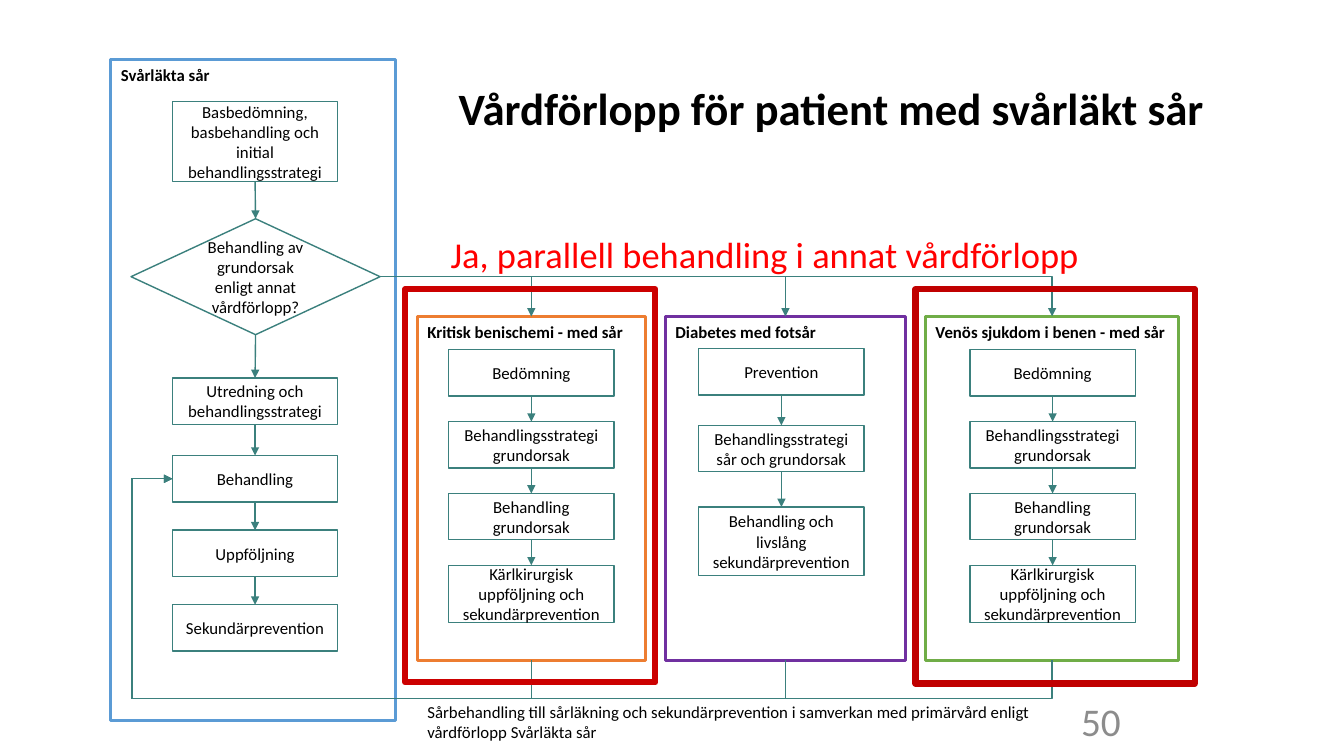
import pptx
import pptx.util
import pptx.dml.color
import pptx.enum.shapes
import pptx.enum.text
import pptx.oxml.ns
import lxml.etree

THEME = {
    "font": "Calibri",
    "black": "000000", "white": "FFFFFF", "grey": "8C8C8C", "alert": "FF0000",
    "teal": "3B807D", "blue": "5B9BD5", "orange": "ED7D31", "purple": "7030A0",
    "green": "70AD47", "red": "CC0000", "dark red": "C00000",
    "body": 12, "subtitle": 26, "number": 28, "title": 32,
    "thin": 1, "lane": 2.25, "thick": 4.5,
}
SHAPE = pptx.enum.shapes.MSO_SHAPE
LINK = pptx.enum.shapes.MSO_CONNECTOR
ALIGN = pptx.enum.text.PP_ALIGN
ANCHOR = pptx.enum.text.MSO_ANCHOR
TOP, LEFT, BOTTOM, RIGHT = range(4)

deck = pptx.Presentation()
deck.slide_width = pptx.util.Inches(13.33)
deck.slide_height = pptx.util.Inches(7.5)
page = deck.slides.add_slide(deck.slide_layouts[6])

# The page is a grid of 133.3 columns and 75 rows
COLUMN = deck.slide_width / 133.3
ROW = deck.slide_height / 75


def add_block(place, text="", kind=SHAPE.RECTANGLE, line=None, weight="thin", fill=None,
              size="body", color="black", bold=False, centred=False, middle=False):
    """Place a shape, or a text box when kind is None, with styled text."""
    left, top, width, height = place
    area = [round(v) for v in (left * COLUMN, top * ROW, width * COLUMN, height * ROW)]
    if kind is None:
        box = page.shapes.add_textbox(*area)
    else:
        box = page.shapes.add_shape(kind, *area)
        box.shadow.inherit = False
        box.line.color.rgb = pptx.dml.color.RGBColor.from_string(THEME[line])
        box.line.width = pptx.util.Pt(THEME[weight])
        if fill:
            box.fill.solid()
            box.fill.fore_color.rgb = pptx.dml.color.RGBColor.from_string(THEME[fill])
        else:
            box.fill.background()
    frame = box.text_frame
    frame.word_wrap = True
    frame.vertical_anchor = ANCHOR.MIDDLE if middle else ANCHOR.TOP
    frame.text = text
    para = frame.paragraphs[0]
    para.alignment = ALIGN.CENTER if centred else ALIGN.LEFT
    for span in para.runs:
        span.font.name = THEME["font"]
        span.font.size = pptx.util.Pt(THEME[size])
        span.font.bold = bold
        span.font.color.rgb = pptx.dml.color.RGBColor.from_string(THEME[color])
    return box


def join(start, start_side, end, end_side, preset=None):
    """Connect two shapes with an arrow; preset names an elbow geometry."""
    arrow = page.shapes.add_connector(LINK.ELBOW if preset else LINK.STRAIGHT, 0, 0, 0, 0)
    arrow.begin_connect(start, start_side)
    arrow.end_connect(end, end_side)
    arrow.line.color.rgb = pptx.dml.color.RGBColor.from_string(THEME["teal"])
    arrow.line.width = pptx.util.Pt(THEME["thin"])
    properties = arrow.element.spPr
    lxml.etree.SubElement(properties.find(pptx.oxml.ns.qn("a:ln")),
                          pptx.oxml.ns.qn("a:tailEnd"), type="triangle")
    lxml.etree.SubElement(properties, pptx.oxml.ns.qn("a:effectLst"))
    if preset:
        properties.find(pptx.oxml.ns.qn("a:prstGeom")).set("prst", preset)
    return arrow


# Headings, caption and page number
add_block((94.2, 69.5, 30, 4), "50", None, size="number", color="grey",
          centred=True, middle=True)
title = add_block((44.5, 8.7, 78.7, 4.7), "Vårdförlopp för patient med svårläkt sår", None,
                  size="title", bold=True, middle=True)
title.text_frame.paragraphs[0].line_spacing = 0.9
add_block((43.7, 22.5, 81.9, 5.4), "Ja, parallell behandling i annat vårdförlopp", None,
          size="subtitle", color="alert")
add_block((41.4, 69.1, 62.9, 5), "Sårbehandling till sårläkning och sekundärprevention i "
          "samverkan med primärvård enligt vårdförlopp Svårläkta sår", None)

# Main pathway and the three parallel lanes: frame, colour, heading, box left, steps
BOX_WIDTH, BOX_HEIGHT = 16.4, 4.6
LANE_TOP, LANE_HEIGHT = 31.4, 34.1
STEP_TOP, STEP_PITCH = 34.7, 7.13
vessel_steps = [
    (STEP_TOP + row * STEP_PITCH, height, text) for row, (height, text) in enumerate([
        (BOX_HEIGHT, "Bedömning"),
        (BOX_HEIGHT, "Behandlingsstrategi grundorsak"),
        (BOX_HEIGHT, "Behandling grundorsak"),
        (5.7, "Kärlkirurgisk uppföljning och sekundärprevention"),
    ])
]
diabetes_steps = [
    (34.6, BOX_HEIGHT, "Prevention"),
    (42.2, BOX_HEIGHT, "Behandlingsstrategi sår och grundorsak"),
    (50.3, 6.8, "Behandling och livslång sekundärprevention"),
]
main_steps = [
    (10.1, 7.9, "Basbedömning, basbehandling och initial behandlingsstrategi"),
    (21.7, 11.5, "Behandling av grundorsak enligt annat vårdförlopp?"),
    (37.5, BOX_HEIGHT, "Utredning och behandlingsstrategi"),
    (45.2, BOX_HEIGHT, "Behandling"),
    (52.6, BOX_HEIGHT, "Uppföljning"),
    (60, BOX_HEIGHT, "Sekundärprevention"),
]
pathways = [
    ((11, 5.9, 28.2, 65.6), "blue", "Svårläkta sår", 17.1, main_steps),
    ((41.4, LANE_TOP, 22.6, LANE_HEIGHT), "orange", "Kritisk benischemi - med sår",
     44.5, vessel_steps),
    ((66, LANE_TOP, 23.8, LANE_HEIGHT), "purple", "Diabetes med fotsår",
     69.3, diabetes_steps),
    ((91.8, LANE_TOP, 25.1, LANE_HEIGHT), "green", "Venös sjukdom i benen - med sår",
     96.2, vessel_steps),
]
lanes, boxes = [], {}
for place, color, heading, box_left, steps in pathways:
    lanes.append(add_block(place, heading, line=color, weight="lane", bold=True))
    previous = None
    for top, height, text in steps:
        decision = text.endswith("?")
        box = add_block((13, top, 24.7, height) if decision
                        else (box_left, top, BOX_WIDTH, height), text,
                        SHAPE.FLOWCHART_DECISION if decision else SHAPE.RECTANGLE,
                        line="teal", fill="white", centred=True, middle=True)
        boxes[text] = box
        if previous:
            join(previous, BOTTOM, box, TOP)
        previous = box

# Arrows from the decision into each lane, and back to the treatment step
decision_box = boxes["Behandling av grundorsak enligt annat vårdförlopp?"]
treatment_box = boxes["Behandling"]
RETURN_ROW, RETURN_COLUMN = 69.3, 13.05
for lane in lanes[1:]:
    join(decision_box, RIGHT, lane, TOP, "bentConnector2")

    back = join(lane, BOTTOM, treatment_box, LEFT, "bentConnector4")
    across, up = back.width, back.height
    centre_x, centre_y = back.left + across / 2, back.top + up / 2
    drop = RETURN_ROW * ROW - (lane.top + lane.height)
    reach = lane.left + lane.width / 2 - RETURN_COLUMN * COLUMN
    # The elbow preset is laid out sideways, then turned a quarter
    back.left, back.top = round(centre_x - up / 2), round(centre_y - across / 2)
    back.width, back.height = up, across
    turn = back.element.spPr.find(pptx.oxml.ns.qn("a:xfrm"))
    turn.set("rot", "5400000")
    turn.set("flipH", "1")
    turn.set("flipV", "0")
    guides = back.element.spPr.find(pptx.oxml.ns.qn("a:prstGeom")).get_or_add_avLst()
    for name, share in (("adj1", -drop / up), ("adj2", reach / across)):
        lxml.etree.SubElement(guides, pptx.oxml.ns.qn("a:gd"), name=name,
                              fmla=f"val {round(share * 100000)}")

# Red emphasis around the two vascular lanes
add_block((40.2, 28.7, 24.8, 39), line="red", weight="thick")
add_block((90.8, 28.7, 27.7, 39.1), line="dark red", weight="thick")

deck.save("out.pptx")
